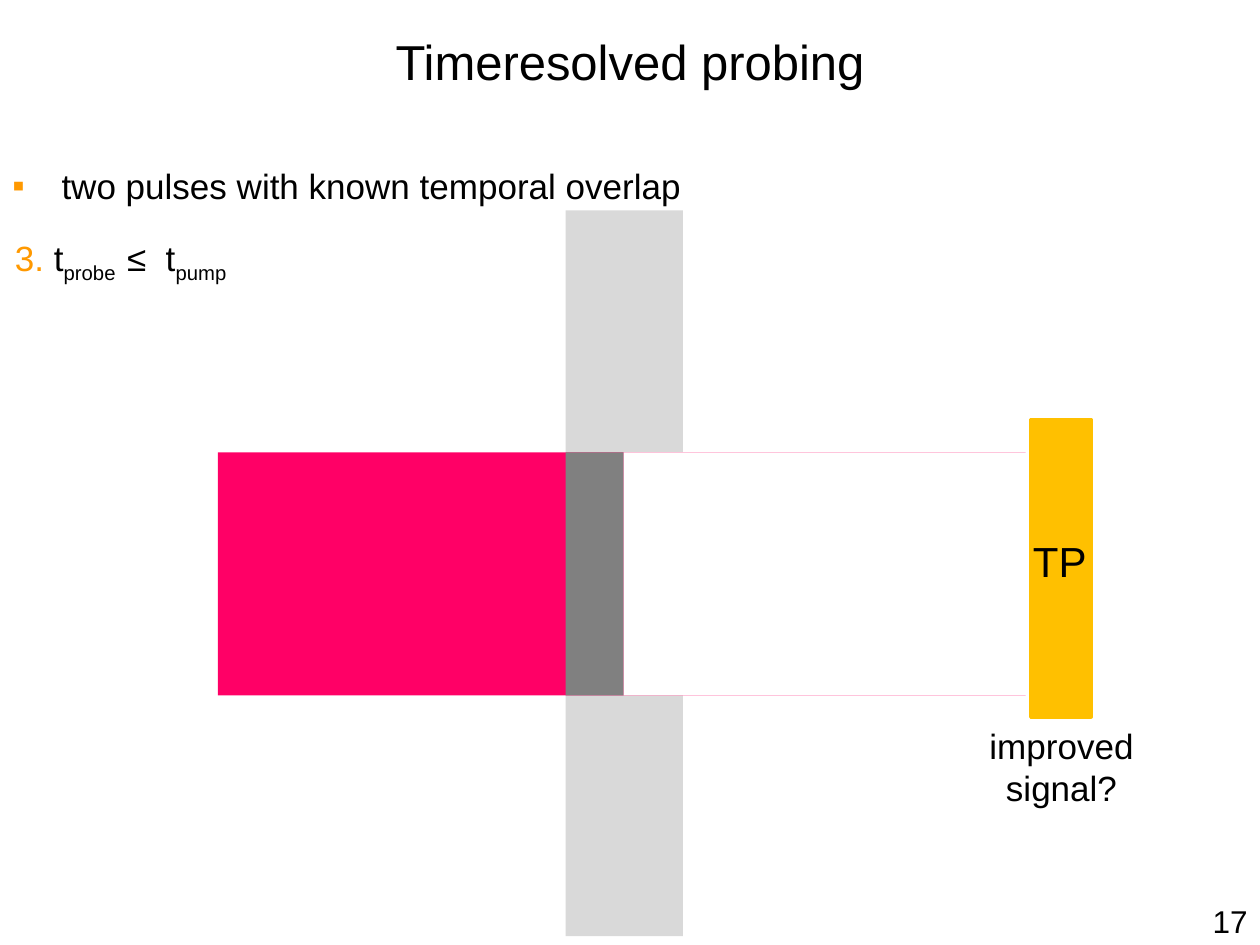
from pptx import Presentation
from pptx.dml.color import RGBColor
from pptx.enum.shapes import MSO_SHAPE
from pptx.enum.text import MSO_ANCHOR, PP_ALIGN
from pptx.oxml import parse_xml
from pptx.oxml.ns import nsdecls
from pptx.util import Inches, Pt

BLACK = RGBColor(0x00, 0x00, 0x00)
WHITE = RGBColor(0xFF, 0xFF, 0xFF)
ORANGE = RGBColor(0xFF, 0x99, 0x00)
PINK = RGBColor(0xFF, 0x00, 0x66)
LIGHT_GREY = RGBColor(0xD9, 0xD9, 0xD9)
GREY = RGBColor(0x80, 0x80, 0x80)
GOLD = RGBColor(0xFF, 0xC0, 0x00)


class SlideBuilder:
    font = "Arial"

    def __init__(self, slide):
        self.slide = slide

    def rect(self, x, y, w, h, color, line_width=None):
        sp = self.slide.shapes.add_shape(
            MSO_SHAPE.RECTANGLE, Inches(x), Inches(y), Inches(w), Inches(h))
        sp.shadow.inherit = False
        sp.fill.solid()
        sp.fill.fore_color.rgb = color
        if line_width:
            sp.line.color.rgb = color
            sp.line.width = Pt(line_width)
        else:
            sp.line.fill.background()
        return sp

    def text(self, x, y, w, h, text, size=20, align=PP_ALIGN.LEFT,
             anchor=MSO_ANCHOR.TOP, wrap=True):
        box = self.slide.shapes.add_textbox(
            Inches(x), Inches(y), Inches(w), Inches(h))
        tf = box.text_frame
        tf.word_wrap = wrap
        tf.vertical_anchor = anchor
        p = tf.paragraphs[0]
        p.text = text
        p.alignment = align
        self.style(p, size)
        return p

    def bullet(self, x, y, w, h, text, char, color):
        p = self.text(x, y, w, h, text)
        pPr = p._p.get_or_add_pPr()
        pPr.set("marL", str(Inches(0.39)))
        pPr.set("indent", str(-Inches(0.39)))
        ns = nsdecls("a")
        elements = (
            f'<a:buClr {ns}><a:srgbClr val="{color}"/></a:buClr>',
            f'<a:buFont {ns} typeface="{self.font}"/>',
            f'<a:buChar {ns} char="{char}"/>',
        )
        for i, xml in enumerate(elements):
            pPr.insert(i, parse_xml(xml))

    def formula(self, x, y, w, h, parts):
        """Write (text, color, is_subscript) parts on one line."""
        p = self.text(x, y, w, h, "")
        for text, color, is_subscript in parts:
            r = p.add_run()
            r.text = text
            r.font.color.rgb = color
            if is_subscript:
                r.font._element.set("baseline", "-25000")

    def style(self, p, size):
        p.font.name = self.font
        p.font.size = Pt(size)
        p.font.color.rgb = BLACK


def main():
    prs = Presentation()
    prs.slide_width, prs.slide_height = Inches(10), Inches(7.5)
    s = SlideBuilder(prs.slides.add_slide(prs.slide_layouts[6]))

    # Title and statements
    s.text(0, 0.01, 10, 0.95, "Timeresolved probing", 28,
           PP_ALIGN.CENTER, MSO_ANCHOR.MIDDLE)
    s.bullet(0, 1.26, 6.56, 0.44, "two pulses with known temporal overlap",
             "▪", ORANGE)
    s.formula(0.02, 1.83, 3.91, 0.44, [
        ("3. ", ORANGE, False),
        ("t", BLACK, False),
        ("probe  ", BLACK, True),
        ("≤  t", BLACK, False),
        ("pump", BLACK, True),
    ])

    # Pump pulse above and below the beam
    beam_top, beam_height = 3.59, 1.93
    pump_left, pump_width, pump_height = 4.49, 0.93, 1.92
    for top in (beam_top - pump_height, beam_top + pump_height):
        s.rect(pump_left, top, pump_width, pump_height, LIGHT_GREY)

    # Probe beam, its overlap with the pump, and the blocked remainder
    overlap = 0.46
    blocked_left = pump_left + overlap
    s.rect(1.73, beam_top, 6.41, beam_height, PINK)
    s.rect(pump_left, beam_top, overlap, beam_height, GREY)
    s.rect(blocked_left, beam_top, 3.71, beam_height, WHITE)

    # Detector
    s.rect(8.18, 3.33, 0.48, 2.36, GOLD, line_width=2)
    s.text(8.1, 4.2, 0.64, 0.5, "TP", 24, wrap=False)
    s.text(7.39, 5.7, 2.07, 0.77, "improved signal?", align=PP_ALIGN.CENTER)

    # Page number
    s.text(9.39, 7.11, 0.61, 0.4, "17", 18, PP_ALIGN.RIGHT)

    prs.save("out.pptx")


if __name__ == "__main__":
    main()
